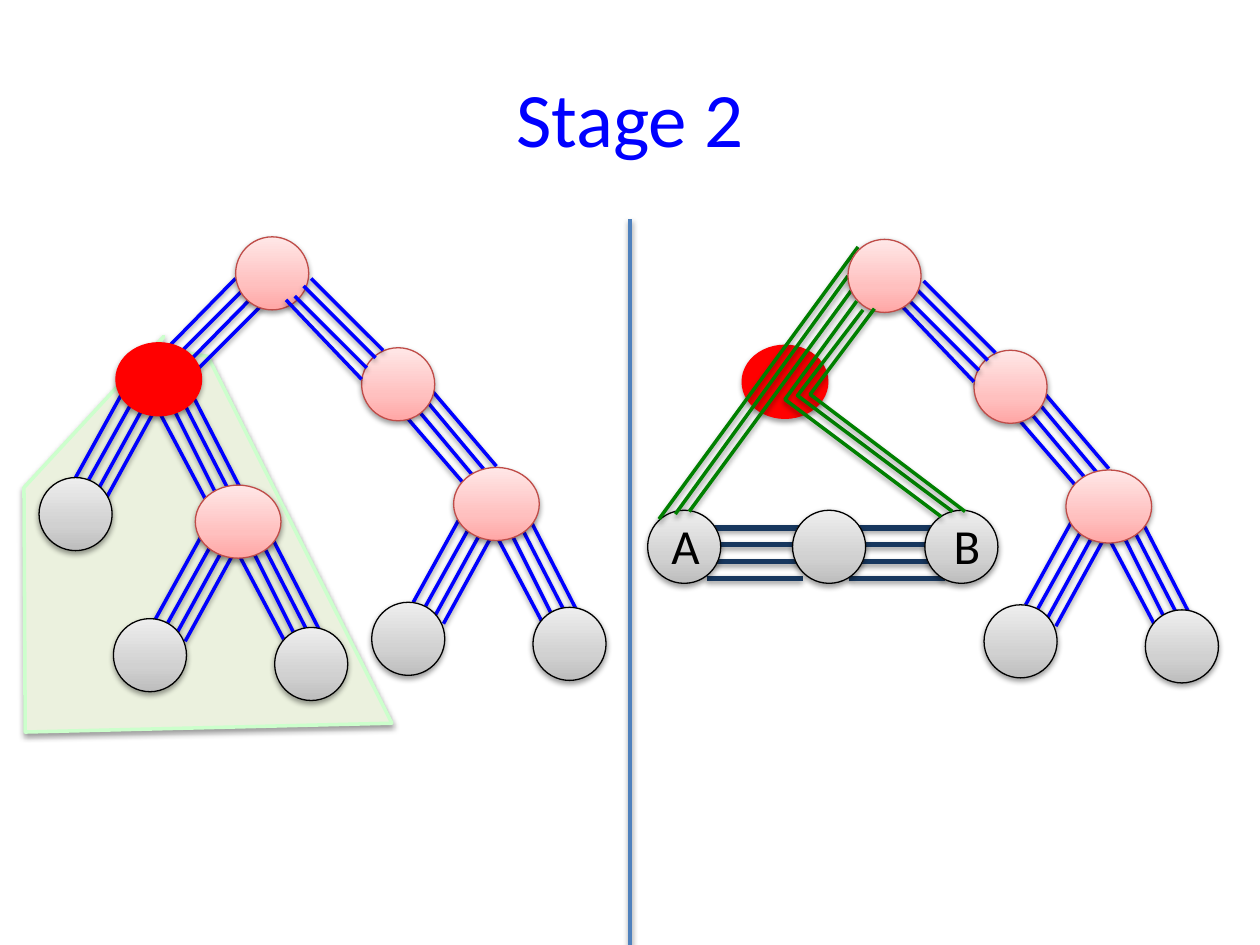
import copy
from typing import NamedTuple

import pptx
import pptx.dml.color
import pptx.enum.shapes
import pptx.enum.text
import pptx.oxml
import pptx.oxml.ns
import pptx.util

RGBColor = pptx.dml.color.RGBColor
BLACK = RGBColor(0x00, 0x00, 0x00)
BLUE = RGBColor(0x00, 0x00, 0xFF)
NAVY = RGBColor(0x17, 0x37, 0x5E)
STEEL = RGBColor(0x4F, 0x81, 0xBD)
GREEN = RGBColor(0x00, 0x80, 0x00)
MINT = RGBColor(0xCC, 0xFF, 0xCC)
SAGE = RGBColor(0xEB, 0xF1, 0xDE)
RED = RGBColor(0xFF, 0x00, 0x00)
BRICK = RGBColor(0xBF, 0x4C, 0x48)
PINKS = (RGBColor(0xFF, 0xA6, 0xA5), RGBColor(0xFF, 0xC0, 0xBF), RGBColor(0xFF, 0xE7, 0xE7))
GREYS = (RGBColor(0xBD, 0xBD, 0xBD), RGBColor(0xD1, 0xD1, 0xD1), RGBColor(0xEE, 0xEE, 0xEE))
STOPS = (0, 0.35, 1)
SHADOW = (
    f'<a:effectLst {pptx.oxml.ns.nsdecls("a")}>'
    '<a:outerShdw blurRad="40000" dist="20000" dir="5400000" rotWithShape="0">'
    '<a:srgbClr val="000000"><a:alpha val="38000"/></a:srgbClr></a:outerShdw></a:effectLst>'
)


class Point(NamedTuple):
    x: float
    y: float


class Link(NamedTuple):
    """A line, given from the top left corner of its parent node."""
    x1: float
    y1: float
    x2: float
    y2: float


class NodeStyle(NamedTuple):
    width: float
    fill: tuple
    line: RGBColor


LEAF = NodeStyle(0.58, GREYS, BLACK)
INNER = NodeStyle(0.58, PINKS, BRICK)
WIDE = NodeStyle(0.68, PINKS, BRICK)
FAILED = NodeStyle(0.68, (RED,), RED)
NODE_HEIGHT = 0.58

ROOT_LEFT = (Link(0, 0.33, -0.54, 0.88), Link(0.07, 0.41, -0.5, 0.98),
             Link(0.14, 0.47, -0.42, 1.04), Link(0.21, 0.54, -0.36, 1.11))
ROOT_RIGHT = (Link(0.4, 0.5, 1, 1.13), Link(0.47, 0.47, 1.04, 1.04),
              Link(0.54, 0.39, 1.11, 0.96), Link(0.6, 0.33, 1.17, 0.9))
MIDDLE = (Link(0.33, 0.52, 0.83, 1.1), Link(0.41, 0.45, 0.93, 1.07),
          Link(0.48, 0.38, 1, 1), Link(0.55, 0.33, 1.07, 0.94))
FORK = (Link(0.05, 0.4, -0.32, 1.07), Link(0.14, 0.45, -0.25, 1.15),
        Link(0.23, 0.49, -0.16, 1.2), Link(0.31, 0.53, -0.08, 1.24),
        Link(0.35, 0.56, 0.71, 1.24), Link(0.45, 0.51, 0.81, 1.23),
        Link(0.53, 0.46, 0.9, 1.18), Link(0.61, 0.42, 0.98, 1.14))
GREEN_LINES = (Link(6.81, 1.96, 5.23, 4.12), Link(6.73, 2.19, 5.36, 4.08),
               Link(6.82, 2.22, 5.47, 4.06))
GREEN_BENDS = (
    (Point(6.8, 2.39), Point(6.23, 3.17), Point(7.47, 4.1)),
    (Point(6.85, 2.46), Point(6.33, 3.14), Point(7.56, 4.06)),
    (Point(6.94, 2.45), Point(6.43, 3.13), Point(7.66, 4.06)),
)
REGION = (Point(1.3, 2.67), Point(0.19, 3.87), Point(0.2, 5.81),
          Point(3.11, 5.74), Point(1.65, 2.83), Point(1.24, 2.76))
ORIGIN = Point(0, 0)


def size(units: float) -> int:
    """Length of a number of grid units, each 2.54 cm."""
    return pptx.util.Cm(2.54 * units)


def finish(shape, color: RGBColor, width: float) -> None:
    """Set the outline, then the soft shadow that all drawn parts share."""
    shape.line.color.rgb = color
    shape.line.width = pptx.util.Pt(width)
    properties = shape.element.spPr
    properties.append(pptx.oxml.parse_xml(SHADOW))


def add_links(page, links, start: Point = ORIGIN, color: RGBColor = BLUE, width: float = 2) -> None:
    for link in links:
        connector = page.shapes.add_connector(
            pptx.enum.shapes.MSO_CONNECTOR.STRAIGHT,
            size(start.x + link.x1), size(start.y + link.y1),
            size(start.x + link.x2), size(start.y + link.y2))
        finish(connector, color, width)


def add_node(page, corner: Point, style: NodeStyle) -> None:
    node = page.shapes.add_shape(
        pptx.enum.shapes.MSO_SHAPE.OVAL,
        size(corner.x), size(corner.y), size(style.width), size(NODE_HEIGHT))
    if len(style.fill) == 1:
        node.fill.solid()
        node.fill.fore_color.rgb = style.fill[0]
    else:
        node.fill.gradient()
        node.fill.gradient_angle = 90
        stop_list = node.element.spPr.find(".//" + pptx.oxml.ns.qn("a:gsLst"))
        stop_list.insert(1, copy.deepcopy(stop_list[0]))
        for stop, position, color in zip(node.fill.gradient_stops, STOPS, style.fill):
            stop.position = position
            stop.color.rgb = color
    finish(node, style.line, 0.75)


def add_outline(page, points, color: RGBColor, fill=None) -> None:
    """Draw a closed area when a fill is given, else an open bent line."""
    corners = [(size(point.x), size(point.y)) for point in points]
    builder = page.shapes.build_freeform(*corners[0], scale=1.0)
    builder.add_line_segments(corners[1:], close=fill is not None)
    outline = builder.convert_to_shape()
    if fill is None:
        outline.fill.background()
    else:
        outline.fill.solid()
        outline.fill.fore_color.rgb = fill
    finish(outline, color, 2)


def add_text(page, text: str, *, left: float, top: float, width: float, height: float,
             points: float, color: RGBColor = BLACK,
             align=pptx.enum.text.PP_ALIGN.LEFT,
             anchor=pptx.enum.text.MSO_ANCHOR.TOP) -> None:
    box = page.shapes.add_textbox(size(left), size(top), size(width), size(height))
    box.text_frame.word_wrap = True
    box.text_frame.vertical_anchor = anchor
    para = box.text_frame.paragraphs[0]
    para.alignment = align
    span = para.add_run()
    span.text = text
    span.font.name = "Calibri"
    span.font.size = pptx.util.Pt(points)
    span.font.color.rgb = color


def add_right_branch(page, root: Point) -> None:
    """Draw the intact half of a tree, which both stages share."""
    middle = Point(root.x + 1, root.y + 0.88)
    parent = Point(root.x + 1.73, root.y + 1.83)
    add_links(page, MIDDLE, middle)
    add_node(page, middle, INNER)
    add_links(page, FORK, parent)
    add_node(page, parent, WIDE)
    add_node(page, Point(parent.x - 0.65, parent.y + 1.07), LEAF)
    add_node(page, Point(parent.x + 0.63, parent.y + 1.11), LEAF)
    add_links(page, ROOT_RIGHT, root)


def add_left_tree(page) -> None:
    root, failed, parent = Point(1.87, 1.88), Point(0.92, 2.72), Point(1.55, 3.85)
    add_links(page, ROOT_LEFT, root)
    add_node(page, root, INNER)
    for fork in (failed, parent):
        add_links(page, FORK, fork)
    add_node(page, failed, FAILED)
    add_node(page, parent, WIDE)
    for corner in (Point(0.31, 3.79), Point(0.9, 4.91), Point(2.18, 4.98)):
        add_node(page, corner, LEAF)
    add_right_branch(page, root)


def add_right_tree(page) -> None:
    root = Point(6.73, 1.9)
    add_right_branch(page, root)
    add_node(page, Point(5.89, 2.74), FAILED)
    for x in (5.61, 6.74):
        rows = [4.19 + 0.133 * row for row in range(4)]
        add_links(page, [Link(x, y, x + 0.76, y) for y in rows], color=NAVY, width=3)
    for x in (5.14, 6.29, 7.34):
        add_node(page, Point(x, 4.05), LEAF)
    add_links(page, GREEN_LINES, color=GREEN)
    add_node(page, root, INNER)
    for bend in GREEN_BENDS:
        add_outline(page, bend, GREEN)
    for text, left in (("A", 5.23), ("B", 7.47)):
        add_text(page, text, left=left, top=4.04, width=0.79, height=0.57, points=28)


def main() -> None:
    deck = pptx.Presentation()
    deck.slide_width, deck.slide_height = size(10), size(7.5)
    page = deck.slides.add_slide(deck.slide_layouts[6])
    add_outline(page, REGION, MINT, SAGE)
    add_text(page, "Stage 2", left=0.5, top=0.3, width=9, height=1.25, points=44, color=BLUE,
             align=pptx.enum.text.PP_ALIGN.CENTER, anchor=pptx.enum.text.MSO_ANCHOR.MIDDLE)
    add_left_tree(page)
    add_links(page, [Link(5, 1.74, 5, 7.5)], color=STEEL)
    add_right_tree(page)
    deck.save("out.pptx")


if __name__ == "__main__":
    main()
